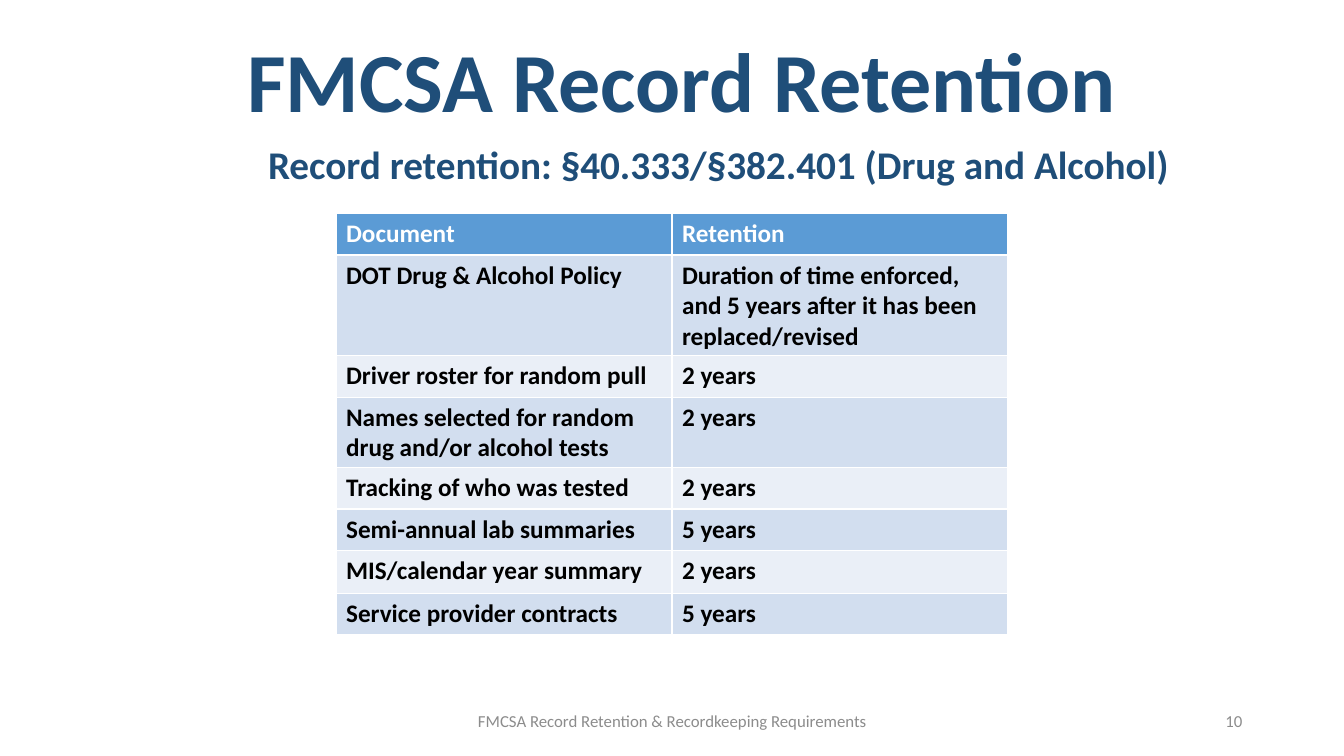
"""Build the FMCSA record retention slide."""
from pptx import Presentation
from pptx.dml.color import RGBColor
from pptx.enum.text import MSO_ANCHOR, PP_ALIGN
from pptx.util import Inches, Pt

TOP, MIDDLE, BOTTOM = MSO_ANCHOR.TOP, MSO_ANCHOR.MIDDLE, MSO_ANCHOR.BOTTOM
LEFT, CENTER, RIGHT = PP_ALIGN.LEFT, PP_ALIGN.CENTER, PP_ALIGN.RIGHT
FONT = "Calibri"
COLORS = {
    "navy": "1F4E79",
    "gray": "8C8C8C",
    "white": "FFFFFF",
    "black": "000000",
    "header": "5B9BD5",
    "dark_band": "D2DEEF",
    "light_band": "EAEFF7",
}
ROW_HEIGHT = 0.41
SUMMARY_HEIGHT = 0.43
FOOTER_TOP, FOOTER_HEIGHT = 6.95, 0.4


def style_text(frame, size, color, bold, align=LEFT):
    para = frame.paragraphs[0]
    para.alignment = align
    for span in para.runs:
        span.font.name = FONT
        span.font.size = Pt(size)
        span.font.bold = bold
        span.font.color.rgb = RGBColor.from_string(COLORS[color])


def add_text(page, area, text, size, color, bold, align, anchor):
    box = page.shapes.add_textbox(*map(Inches, area))
    frame = box.text_frame
    frame.word_wrap = True
    frame.vertical_anchor = anchor
    frame.text = text
    style_text(frame, size, color, bold, align)
    return frame


deck = Presentation()
deck.slide_width = Inches(13.33)
deck.slide_height = Inches(7.5)
page = deck.slides.add_slide(deck.slide_layouts[6])

title = add_text(page, (1.76, 0.19, 10, 1.16), "FMCSA Record Retention",
                 60, "navy", True, CENTER, BOTTOM)
title.paragraphs[0].line_spacing = 0.9
add_text(page, (2.56, 1.34, 9.59, 1.04),
         "Record retention: §40.333/§382.401 (Drug and Alcohol)",
         28, "navy", True, LEFT, TOP)

records = [
    ("Document", "Retention"),
    ("DOT Drug & Alcohol Policy",
     "Duration of time enforced, and 5 years after it has been replaced/revised"),
    ("Driver roster for random pull", "2 years"),
    ("Names selected for random drug and/or alcohol tests", "2 years"),
    ("Tracking of who was tested", "2 years"),
    ("Semi-annual lab summaries", "5 years"),
    ("MIS/calendar year summary", "2 years"),
    ("Service provider contracts", "5 years"),
]
table_width = deck.slide_width // 2
table = page.shapes.add_table(
    len(records), 2, deck.slide_width // 4, Inches(2.12),
    table_width, Inches(ROW_HEIGHT * len(records))).table

for row_index, record in enumerate(records):
    is_summary = record[0].startswith("MIS")
    table.rows[row_index].height = Inches(SUMMARY_HEIGHT if is_summary else ROW_HEIGHT)
    if row_index == 0:
        fill, ink = "header", "white"
    else:
        fill, ink = ("dark_band" if row_index % 2 else "light_band"), "black"
    for cell, text in zip(table.rows[row_index].cells, record):
        cell.text_frame.text = text
        cell.fill.solid()
        cell.fill.fore_color.rgb = RGBColor.from_string(COLORS[fill])
        style_text(cell.text_frame, 18, ink, True)

footers = [
    (4.42, 4.5, "FMCSA Record Retention & Recordkeeping Requirements", CENTER),
    (9.42, 3, "10", RIGHT),
]
for left, width, text, align in footers:
    add_text(page, (left, FOOTER_TOP, width, FOOTER_HEIGHT), text,
             12, "gray", False, align, MIDDLE)

deck.save("out.pptx")
